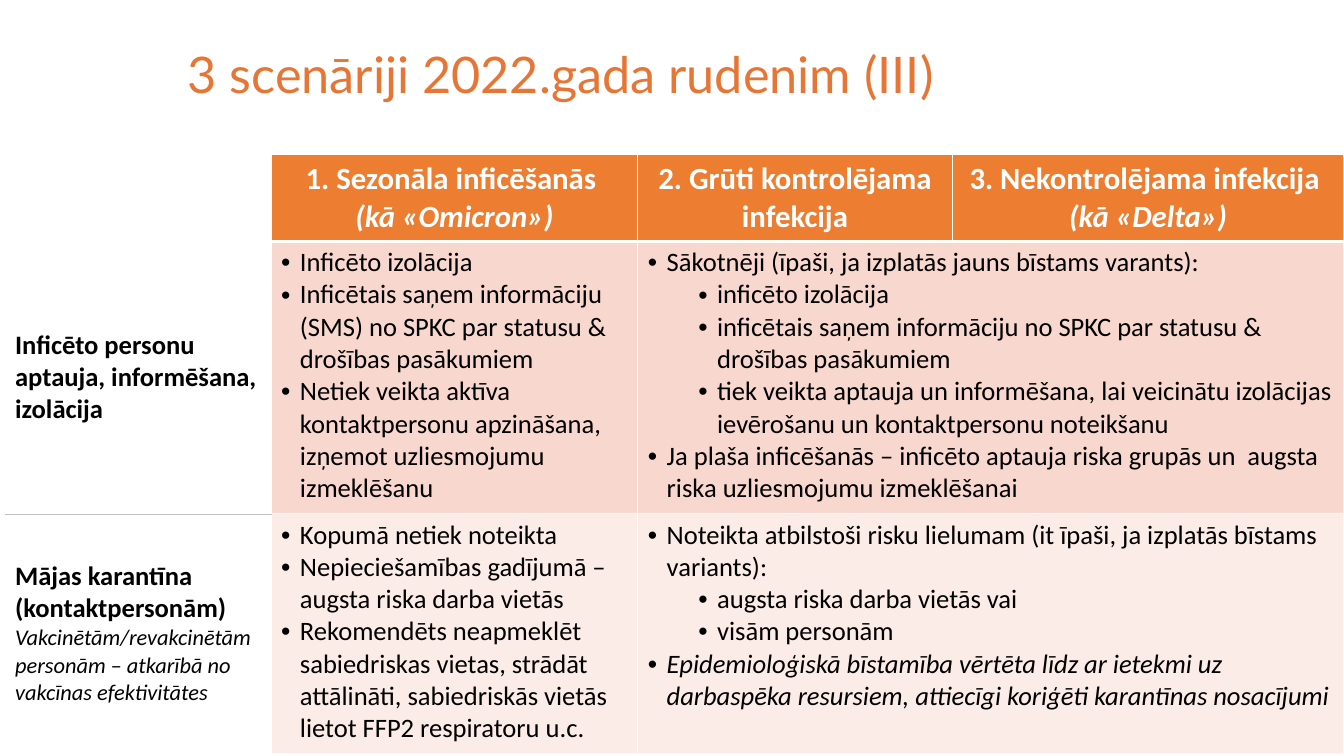
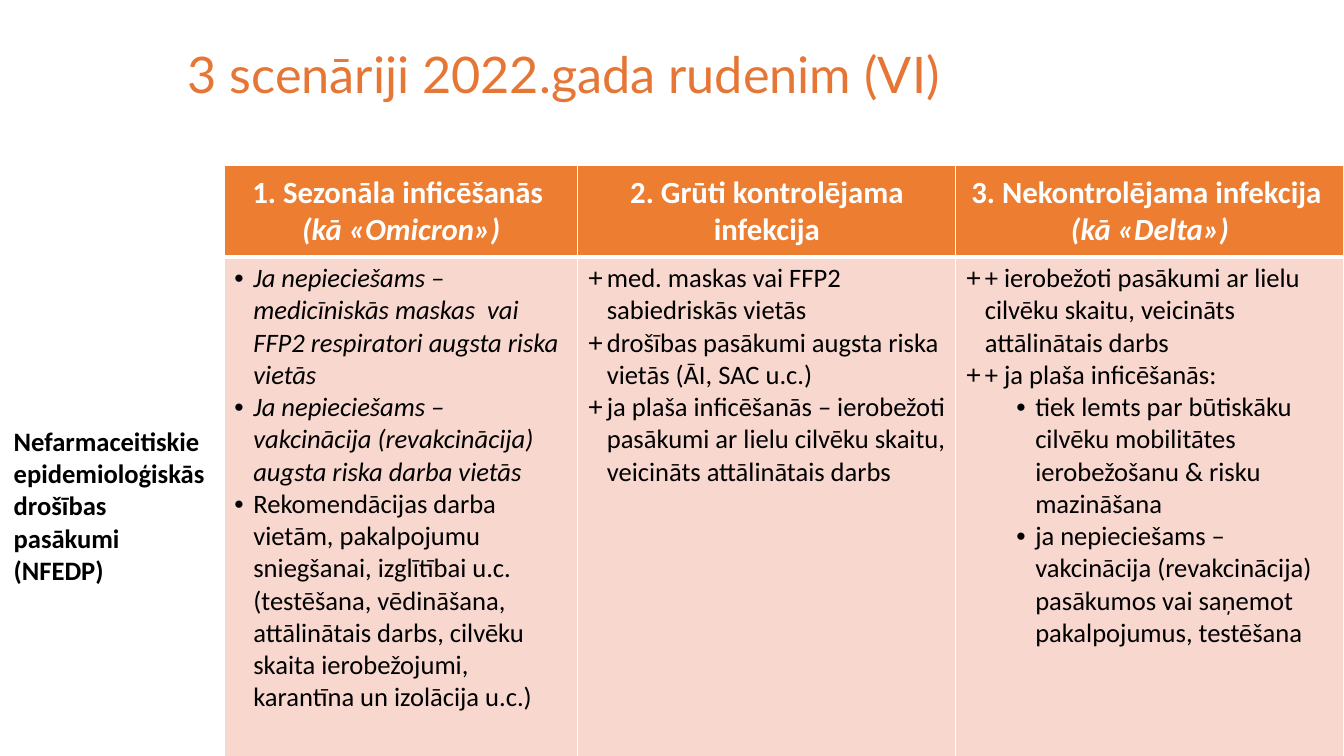
"""Two slides comparing the three scenarios for autumn 2022 in tables."""
from lxml.etree import SubElement
from pptx import Presentation
from pptx.dml.color import RGBColor
from pptx.enum.text import MSO_ANCHOR, PP_ALIGN
from pptx.oxml.ns import qn
from pptx.util import Pt

COLORS = {"title": "E67636", "header": "ED7D31", "first": "F8D7CE",
          "second": "FCECE8", "white": "FFFFFF", "text": "000000",
          "rule": "BFBFBF"}

STYLES = {
    "header": {"size": 22, "bold": True, "color": "white"},
    "label": {"size": 19, "bold": True},
    "note": {"size": 16, "italic": True},
    "item": {"size": 19, "bullet": "•"},
    "item italic": {"size": 19, "bullet": "•", "italic": True},
    "sub": {"size": 19, "bullet": "•", "level": 1},
    "plus": {"size": 19, "bullet": "+"},
}

HEADERS = [
    [("header", "1. Sezonāla inficēšanās \v(kā «Omicron»)")],
    [("header", "2. Grūti kontrolējama infekcija")],
    [("header", "3. Nekontrolējama infekcija \v(kā «Delta»)")],
]

SLIDES = [
    {
        "title": "3 scenāriji 2022.gada rudenim (III)",
        "left": 3.6, "top": 110.5,
        "columns": [190, 262, 224.6, 279.8],
        "heights": [62, 194.5, 171],
        "merge_last": True,
        "rows": [
            [
                [("label", "Inficēto personu aptauja, informēšana, izolācija")],
                [("item", "Inficēto izolācija"),
                 ("item", "Inficētais saņem informāciju (SMS) no SPKC par statusu & drošības pasākumiem"),
                 ("item", "Netiek veikta aktīva kontaktpersonu apzināšana, izņemot uzliesmojumu izmeklēšanu")],
                [("item", "Sākotnēji (īpaši, ja izplatās jauns bīstams varants):"),
                 ("sub", "inficēto izolācija"),
                 ("sub", "inficētais saņem informāciju no SPKC par statusu & drošības pasākumiem"),
                 ("sub", "tiek veikta aptauja un informēšana, lai veicinātu izolācijas ievērošanu un kontaktpersonu noteikšanu"),
                 ("item", "Ja plaša inficēšanās – inficēto aptauja riska grupās un  augsta riska uzliesmojumu izmeklēšanai")],
            ],
            [
                [("label", "Mājas karantīna (kontaktpersonām)"),
                 ("note", "Vakcinētām/revakcinētām personām – atkarībā no vakcīnas efektivitātes")],
                [("item", "Kopumā netiek noteikta"),
                 ("item", "Nepieciešamības gadījumā – augsta riska darba vietās"),
                 ("item", "Rekomendēts neapmeklēt sabiedriskas vietas, strādāt attālināti, sabiedriskās vietās lietot FFP2 respiratoru u.c.")],
                [("item", "Noteikta atbilstoši risku lielumam (it īpaši, ja izplatās bīstams variants):"),
                 ("sub", "augsta riska darba vietās vai"),
                 ("sub", "visām personām"),
                 ("item italic", "Epidemioloģiskā bīstamība vērtēta līdz ar ietekmi uz darbaspēka resursiem, attiecīgi koriģēti karantīnas nosacījumi")],
            ],
        ],
    },
    {
        "title": "3 scenāriji 2022.gada rudenim (VI)",
        "left": 2.6, "top": 118.4,
        "columns": [157.7, 252.5, 270, 277.2],
        "heights": [65.4, 356.4],
        "merge_last": False,
        "rows": [
            [
                [("label", "Nefarmaceitiskie epidemioloģiskās drošības pasākumi (NFEDP)")],
                [("item italic", "Ja nepieciešams – medicīniskās maskas  vai FFP2 respiratori augsta riska vietās"),
                 ("item italic", "Ja nepieciešams – vakcinācija (revakcinācija) augsta riska darba vietās"),
                 ("item", "Rekomendācijas darba vietām, pakalpojumu sniegšanai, izglītībai u.c. (testēšana, vēdināšana, attālinātais darbs, cilvēku skaita ierobežojumi, karantīna un izolācija u.c.)")],
                [("plus", "med. maskas vai FFP2 sabiedriskās vietās"),
                 ("plus", "drošības pasākumi augsta riska vietās (ĀI, SAC u.c.)"),
                 ("plus", "ja plaša inficēšanās – ierobežoti pasākumi ar lielu cilvēku skaitu, veicināts attālinātais darbs")],
                [("plus", "+ ierobežoti pasākumi ar lielu cilvēku skaitu, veicināts attālinātais darbs"),
                 ("plus", "+ ja plaša inficēšanās:"),
                 ("sub", "tiek lemts par būtiskāku cilvēku mobilitātes ierobežošanu & risku mazināšana"),
                 ("sub", "ja nepieciešams – vakcinācija (revakcinācija) pasākumos vai saņemot pakalpojumus, testēšana")],
            ],
        ],
    },
]


def write_cell(cell, content):
    for index, (style_key, text) in enumerate(content):
        style = STYLES[style_key]
        frame = cell.text_frame
        paragraph = frame.add_paragraph() if index else frame.paragraphs[0]
        paragraph.text = text
        if style_key == "header":
            paragraph.alignment = PP_ALIGN.CENTER
        if "bullet" in style:
            paragraph.level = style.get("level", 0)
            properties = paragraph._p.get_or_add_pPr()
            properties.set("marL", str(Pt(13.5 + 36 * paragraph.level)))
            properties.set("indent", str(-Pt(13.5)))
            SubElement(properties, qn("a:buFont"), typeface="Arial")
            SubElement(properties, qn("a:buChar"), char=style["bullet"])
        for position, run in enumerate(paragraph.runs):
            run.font.name = "Calibri"
            run.font.size = Pt(style["size"])
            run.font.bold = style.get("bold", False)
            run.font.italic = style.get("italic", False) or position > 0
            run.font.color.rgb = RGBColor.from_string(COLORS[style.get("color", "text")])


def draw_border(cell, side, width, color):
    line = SubElement(cell._tc.get_or_add_tcPr(), qn(f"a:ln{side}"), w=str(Pt(width)))
    if color is None:
        SubElement(line, qn("a:noFill"))
    else:
        fill = SubElement(line, qn("a:solidFill"))
        SubElement(fill, qn("a:srgbClr"), val=COLORS[color])


presentation = Presentation()
presentation.slide_width, presentation.slide_height = Pt(960), Pt(540)

for content in SLIDES:
    slide = presentation.slides.add_slide(presentation.slide_layouts[5])
    title = slide.shapes.title
    title.left, title.top, title.width, title.height = Pt(126.7), Pt(2.9), Pt(770), Pt(104.4)
    title.text_frame.text = content["title"]
    title.text_frame.vertical_anchor = MSO_ANCHOR.MIDDLE
    heading = title.text_frame.paragraphs[0]
    heading.alignment = PP_ALIGN.LEFT
    heading.line_spacing = 0.9
    heading.runs[0].font.name = "Lato"
    heading.runs[0].font.size = Pt(36)
    heading.runs[0].font.color.rgb = RGBColor.from_string(COLORS["title"])

    rows = [[[]] + HEADERS] + content["rows"]
    columns, heights = content["columns"], content["heights"]
    scenarios = slide.shapes.add_table(
        len(rows), len(columns), Pt(content["left"]), Pt(content["top"]),
        Pt(sum(columns)), Pt(sum(heights))).table
    scenarios.first_row = scenarios.horz_banding = False
    for column, width in zip(scenarios.columns, columns):
        column.width = Pt(width)
    for row, height in zip(scenarios.rows, heights):
        row.height = Pt(height)

    for row_index, row_content in enumerate(rows):
        row_fill = ("header", "first", "second")[row_index]
        for column_index in range(len(columns)):
            cell = scenarios.cell(row_index, column_index)
            if column_index == 0:
                draw_border(cell, "L", 1, None)
                draw_border(cell, "R", 1, None)
                draw_border(cell, "T", 0.25, "rule" if row_index == 2 else None)
                draw_border(cell, "B", 0.25, "rule" if row_index == 1 else None)
                cell.fill.background()
            else:
                draw_border(cell, "L", 1, "white")
                draw_border(cell, "R", 1, "white")
                draw_border(cell, "T", 3 if row_index == 1 else 1, "white")
                draw_border(cell, "B", 3 if row_index == 0 else 1, "white")
                cell.fill.solid()
                cell.fill.fore_color.rgb = RGBColor.from_string(COLORS[row_fill])
            if row_index == 0 or column_index == 0:
                cell.vertical_anchor = MSO_ANCHOR.MIDDLE
            if column_index < len(row_content):
                write_cell(cell, row_content[column_index])
        if content["merge_last"] and row_index > 0:
            scenarios.cell(row_index, 2).merge(scenarios.cell(row_index, 3))

presentation.save("out.pptx")
